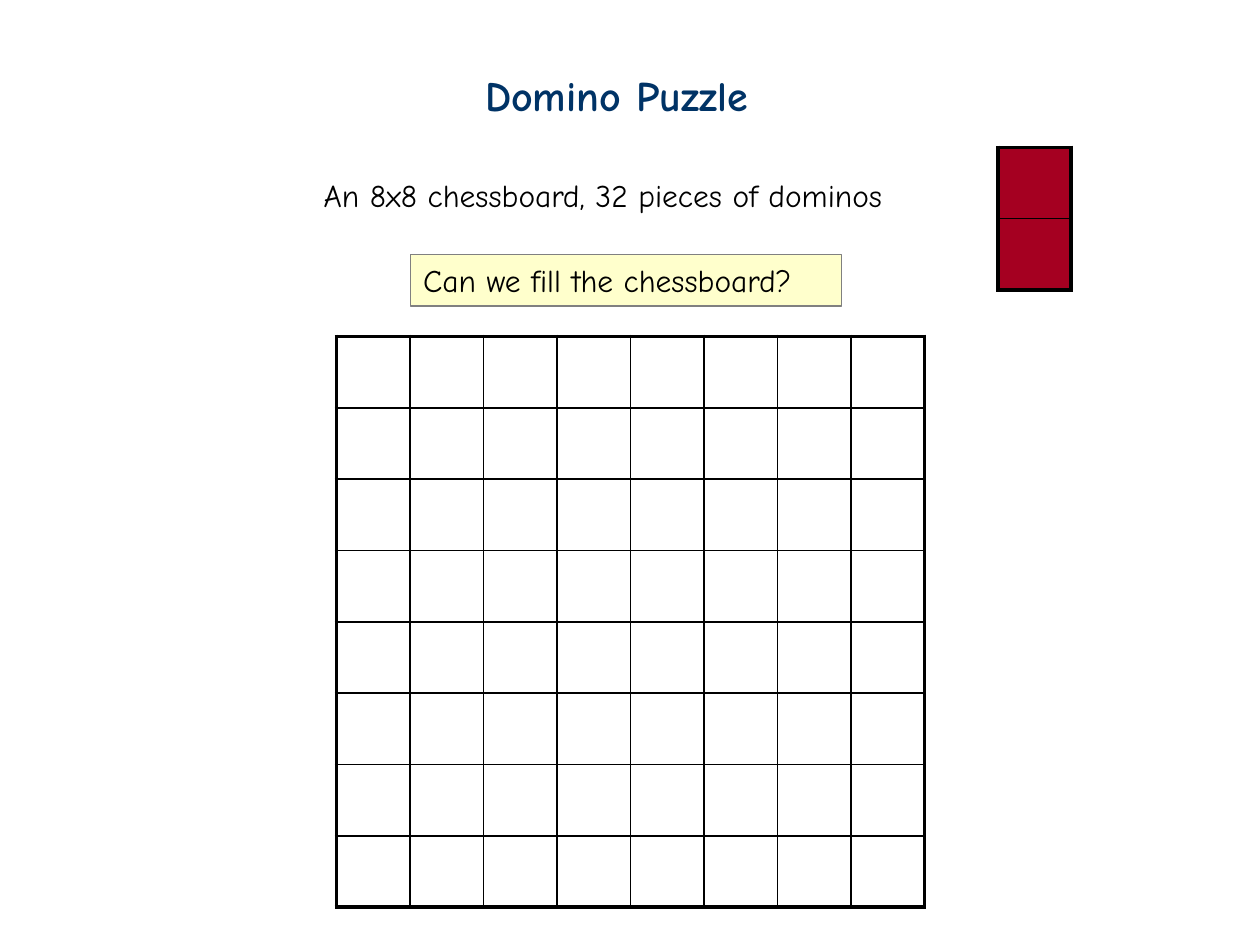
from lxml import etree
from pptx import Presentation
from pptx.dml.color import RGBColor
from pptx.enum import shapes, text
from pptx.oxml import ns
from pptx.util import Inches, Pt

FONT = "Comic Neue"


def write(box, words, size, color, bold=False):
    frame = box.text_frame
    frame.word_wrap = True
    frame.auto_size = text.MSO_AUTO_SIZE.NONE
    frame.vertical_anchor = text.MSO_ANCHOR.TOP
    para = frame.paragraphs[0]
    para.text = words
    para.alignment = text.PP_ALIGN.LEFT
    para.font.name = FONT
    para.font.size = Pt(size)
    para.font.bold = bold
    para.font.color.rgb = RGBColor.from_string(color)


def add_grid(page, rows, columns, left, top, width, height, fill=None):
    """Add an empty table with thin inner lines and a thick outline."""
    frame = page.shapes.add_table(rows, columns, Inches(left), Inches(top),
                                  Inches(width), Inches(height))
    table = frame.table
    table.first_row = table.horz_banding = False
    for row in range(rows):
        for column in range(columns):
            cell = table.cell(row, column)
            properties = cell._tc.get_or_add_tcPr()
            outer_sides = {"lnL": column == 0, "lnR": column == columns - 1,
                           "lnT": row == 0, "lnB": row == rows - 1}
            for side, outer in outer_sides.items():
                line = etree.SubElement(properties, ns.qn("a:" + side),
                                        w=str(Pt(2.25 if outer else 1)))
                solid = etree.SubElement(line, ns.qn("a:solidFill"))
                etree.SubElement(solid, ns.qn("a:srgbClr"), val="000000")
            if fill:
                cell.fill.solid()
                cell.fill.fore_color.rgb = RGBColor.from_string(fill)
            else:
                cell.fill.background()


deck = Presentation()
deck.slide_width, deck.slide_height = Inches(10), Inches(7.5)
page = deck.slides.add_slide(deck.slide_layouts[5])

title = page.shapes.title
title.left, title.top = Inches(3.75), Inches(0.5)
title.width, title.height = Inches(2.45), Inches(0.5)
write(title, "Domino Puzzle", 24, "003366", bold=True)

add_grid(page, 8, 8, 2.67, 2.67, 4.67, 4.53)

setup = page.shapes.add_textbox(Inches(2.47), Inches(1.35), Inches(5.03), Inches(0.4))
write(setup, "An 8x8 chessboard, 32 pieces of dominos", 18, "000000")

add_grid(page, 2, 1, 7.92, 1.17, 0.58, 1.13, fill="A50021")

question = page.shapes.add_shape(shapes.MSO_SHAPE.RECTANGLE, Inches(3.26), Inches(2.02),
                                 Inches(3.42), Inches(0.41))
question.shadow.inherit = False
question.fill.solid()
question.fill.fore_color.rgb = RGBColor.from_string("FFFFCC")
question.line.color.rgb = RGBColor.from_string("808080")
question.line.width = Pt(0.75)
write(question, "Can we fill the chessboard?", 18, "000000")

deck.save("out.pptx")
